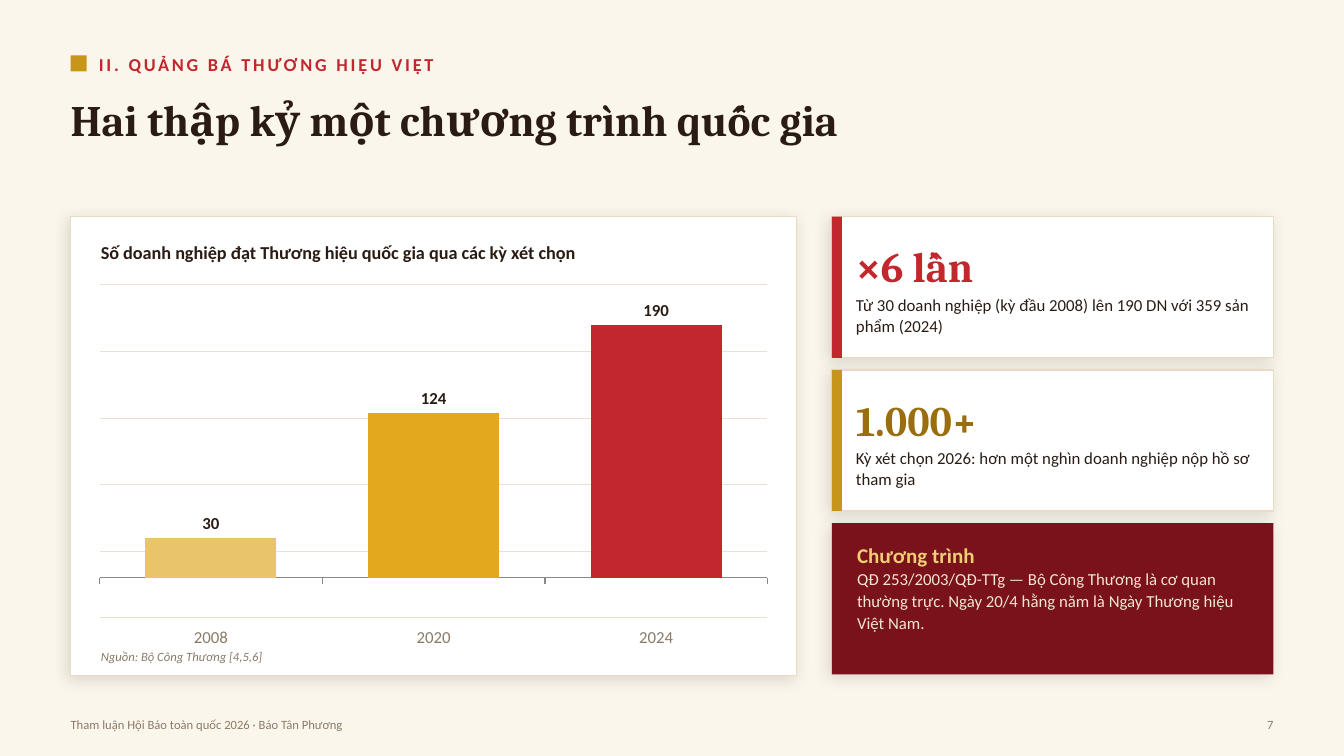
from lxml import etree
from pptx import Presentation
from pptx.chart.data import CategoryChartData
from pptx.dml.color import RGBColor
from pptx.enum.chart import XL_CHART_TYPE as ChartType, XL_LABEL_POSITION as LabelPosition
from pptx.enum.chart import XL_TICK_LABEL_POSITION as TickLabels, XL_TICK_MARK as TickMark
from pptx.enum.shapes import MSO_SHAPE as Shape
from pptx.enum.text import MSO_ANCHOR as Anchor, PP_ALIGN as Align
from pptx.oxml import parse_xml
from pptx.util import Inches, Pt

INK, RED, GOLD, MUTED, WHITE = "2A1C14", "C1272D", "C8951B", "8A7A68", "FFFFFF"
MAROON, BORDER = "7A121B", "EADBC4"
SANS, SERIF = "Calibri", "Cambria"
WIDTH, HEIGHT = 13.33, 7.5
MARGIN = 0.7
CONTENT_W = WIDTH - 2 * MARGIN
TOP = 2.15
CHART_CARD_W, CHART_CARD_H = 7.2, 4.55
SIDE_X, SIDE_W = 8.25, 4.38
STAT_H, STAT_GAP = 1.4, 0.12
FOOTER_Y = 7.04
SHADOW = (
    '<a:effectLst xmlns:a="http://schemas.openxmlformats.org/drawingml/2006/main">'
    '<a:outerShdw blurRad="139700" dist="38100" dir="8100000" algn="bl" rotWithShape="0">'
    f'<a:srgbClr val="{INK}"><a:alpha val="14000"/></a:srgbClr>'
    '</a:outerShdw></a:effectLst>'
)
color = RGBColor.from_string

deck = Presentation()
deck.slide_width, deck.slide_height = Inches(WIDTH), Inches(HEIGHT)
slide = deck.slides.add_slide(deck.slide_layouts[6])
slide.background.fill.solid()
slide.background.fill.fore_color.rgb = color("FBF6EC")


def add_block(x, y, w, h, fill, border=None, raised=False):
    """Draw a flat rectangle; a raised one casts a soft shadow."""
    block = slide.shapes.add_shape(Shape.RECTANGLE, Inches(x), Inches(y), Inches(w), Inches(h))
    block.shadow.inherit = False
    block.fill.solid()
    block.fill.fore_color.rgb = color(fill)
    if border:
        block.line.color.rgb = color(border)
        block.line.width = Pt(1)
    else:
        block.line.fill.background()
    if raised:
        effects = block._element.spPr.find("{*}effectLst")
        effects.getparent().replace(effects, parse_xml(SHADOW))


def add_text(x, y, w, h, lines, font=SANS, anchor=Anchor.MIDDLE, spacing=None):
    """Add a box without insets; each line is (text, size, colour, bold)."""
    frame = slide.shapes.add_textbox(Inches(x), Inches(y), Inches(w), Inches(h)).text_frame
    frame.word_wrap = True
    frame.vertical_anchor = anchor
    frame.margin_left = frame.margin_right = frame.margin_top = frame.margin_bottom = 0
    frame.text = "\n".join(line[0] for line in lines)
    for paragraph, (_, size, ink, bold) in zip(frame.paragraphs, lines):
        if spacing:
            paragraph.line_spacing = spacing
        style = paragraph.runs[0].font
        style.name, style.size, style.bold = font, Pt(size), bold
        style.color.rgb = color(ink)
    return frame.paragraphs[0]


# Heading
add_block(MARGIN, 0.55, 0.16, 0.16, GOLD)
section = add_text(0.98, 0.47, 11.63, 0.34, [("II. QUẢNG BÁ THƯƠNG HIỆU VIỆT", 13, RED, True)])
section.runs[0].font._element.set("spc", "200")
add_text(MARGIN, 0.92, CONTENT_W, 1,
         [("Hai thập kỷ một chương trình quốc gia", 31, INK, True)], SERIF, Anchor.TOP)

# Chart card
add_block(MARGIN, TOP, CHART_CARD_W, CHART_CARD_H, WHITE, BORDER, raised=True)
add_text(MARGIN + 0.3, TOP + 0.15, CHART_CARD_W - 0.6, 0.4,
         [("Số doanh nghiệp đạt Thương hiệu quốc gia qua các kỳ xét chọn", 13, INK, True)])

awards = CategoryChartData(number_format="#,##0")
awards.categories = ["2008", "2020", "2024"]
awards.add_series("Series 1", [30, 124, 190])
chart = slide.shapes.add_chart(
    ChartType.COLUMN_CLUSTERED, Inches(MARGIN + 0.15), Inches(TOP + 0.6),
    Inches(CHART_CARD_W - 0.3), Inches(3.75), awards).chart
chart.has_legend = chart.has_title = False
chart.font.name, chart.font.size = SANS, Pt(10)

years = chart.category_axis
years.tick_label_position = TickLabels.LOW
years.major_tick_mark = TickMark.OUTSIDE
years.tick_labels.font.name, years.tick_labels.font.size = SANS, Pt(12)
years.tick_labels.font.color.rgb = color(MUTED)
years.format.line.color.rgb = color("888888")
years.format.line.width = Pt(1)

counts = chart.value_axis
counts.visible = False
counts.maximum_scale = 220
counts.has_major_gridlines = True
counts.major_gridlines.format.line.color.rgb = color("EDE1CE")
counts.major_gridlines.format.line.width = Pt(0.5)

bars = chart.plots[0]
bars.gap_width = 70
bars.vary_by_categories = False
for index, fill in enumerate(["E9C46A", "E3A81E", RED]):
    bar = bars.series[0].points[index].format.fill
    bar.solid()
    bar.fore_color.rgb = color(fill)
bars.has_data_labels = True
labels = bars.data_labels
labels.show_value = True
labels.number_format, labels.number_format_is_linked = "#,##0", False
labels.position = LabelPosition.OUTSIDE_END
labels.font.name, labels.font.size, labels.font.bold = SANS, Pt(12), True
labels.font.color.rgb = color(INK)

source_note = add_text(MARGIN + 0.3, 6.36, CHART_CARD_W - 0.6, 0.3,
                       [("Nguồn: Bộ Công Thương [4,5,6]", 9, MUTED, False)])
source_note.runs[0].font.italic = True

# Key figures
stats = [
    ("×6 lần", RED, RED, "Từ 30 doanh nghiệp (kỳ đầu 2008) lên 190 DN với 359 sản phẩm (2024)"),
    ("1.000+", GOLD, "9A6E0F", "Kỳ xét chọn 2026: hơn một nghìn doanh nghiệp nộp hồ sơ tham gia"),
]
for row, (figure, accent, ink, detail) in enumerate(stats):
    y = TOP + row * (STAT_H + STAT_GAP)
    add_block(SIDE_X, y, SIDE_W, STAT_H, WHITE, BORDER, raised=True)
    add_block(SIDE_X, y, 0.1, STAT_H, accent)
    add_text(SIDE_X + 0.24, y + 0.14, SIDE_W - 0.4, 0.7, [(figure, 30, ink, True)], SERIF)
    add_text(SIDE_X + 0.24, y + 0.76, SIDE_W - 0.42, 0.59, [(detail, 12, INK, False)],
             anchor=Anchor.TOP, spacing=1.05)

# Programme card
programme_y = TOP + len(stats) * (STAT_H + STAT_GAP)
add_block(SIDE_X, programme_y, SIDE_W, 1.5, MAROON, raised=True)
add_text(SIDE_X + 0.25, programme_y + 0.17, SIDE_W - 0.5, 1.2, [
    ("Chương trình", 15, "F0CE73", True),
    ("QĐ 253/2003/QĐ-TTg — Bộ Công Thương là cơ quan thường trực. "
     "Ngày 20/4 hằng năm là Ngày Thương hiệu Việt Nam.", 12, "F3E6CC", False),
], anchor=Anchor.TOP, spacing=1.08)

# Footer
add_text(MARGIN, FOOTER_Y, 9, 0.3,
         [("Tham luận Hội Báo toàn quốc 2026 · Báo Tân Phương", 9, MUTED, False)])
page = add_text(WIDTH - MARGIN - 0.6, FOOTER_Y, 0.6, 0.3, [("7", 9, MUTED, False)])
page.alignment = Align.RIGHT

deck.save("out.pptx")
